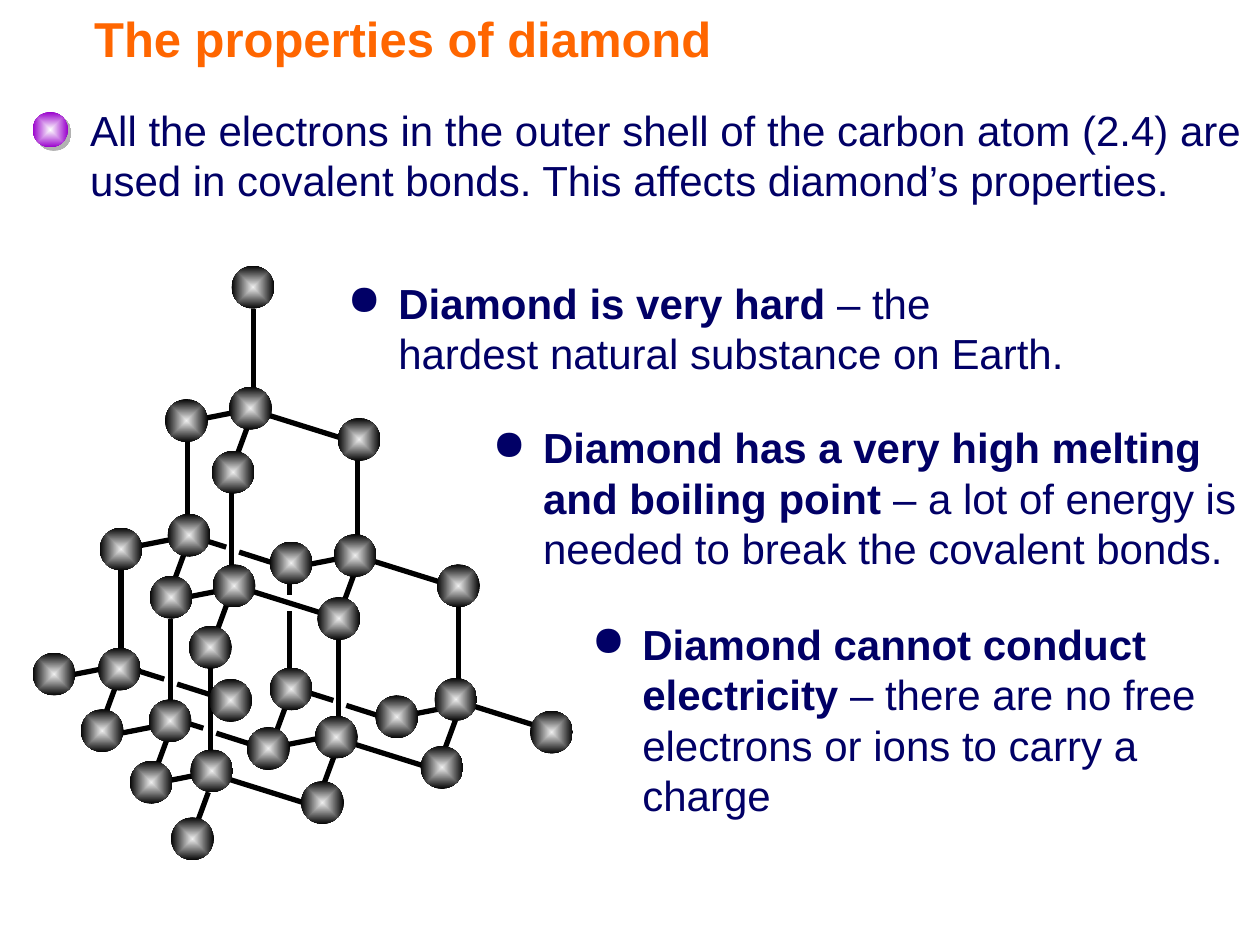
from dataclasses import dataclass

from lxml import etree
from pptx import Presentation
from pptx.dml.color import RGBColor
from pptx.enum.shapes import MSO_CONNECTOR, MSO_SHAPE
from pptx.enum.text import MSO_ANCHOR, MSO_AUTO_SIZE
from pptx.oxml.ns import qn
from pptx.util import Cm, Pt

STRAIGHT = MSO_CONNECTOR.STRAIGHT
OVAL = MSO_SHAPE.OVAL
MIDDLE = MSO_ANCHOR.MIDDLE
TOP = MSO_ANCHOR.TOP
NO_AUTOFIT = MSO_AUTO_SIZE.NONE


@dataclass(frozen=True)
class Theme:
    font: str = "Arial"
    title_size: int = 28
    body_size: int = 24
    title: str = "FF6600"
    body: str = "010066"
    bond: str = "000000"
    bond_width: float = 3
    atom: tuple = ("EFEFEF", "000000")
    marker: tuple = ("FFFFFF", "9900CC")
    shadow: str = "B2B2B2"


ATOM_SIZE = 0.86
ATOM_ROTATION = 358.9
ATOMS = [
    (4.67, 5.36), (2.01, 10.64), (3.38, 10.36), (4.27, 9.09), (3.33, 8.05),
    (5.44, 10.92), (6.81, 8.43), (4.62, 7.8), (6.73, 10.77), (8.81, 11.38),
    (8.48, 15.04), (8.76, 13.67), (10.69, 14.33), (4.29, 11.38), (3.02, 11.61),
    (0.66, 13.16), (1.98, 13.06), (2.62, 15.34), (3.84, 15.11), (5.44, 13.46),
    (4.98, 14.66), (6.07, 15.75), (7.57, 14.02), (3.81, 12.62), (1.63, 14.3),
    (3, 14.1), (4.22, 13.69), (6.35, 14.43), (6.4, 12.04), (3.45, 16.48),
]

BROKEN_STARTS = [(2.74, 13.51), (3.99, 10.85), (6.15, 13.94), (3.53, 14.5)]
BONDS = {
    (0, 1.67): [
        (5.11, 6.22), (3.78, 8.86), (7.21, 9.27), (4.67, 9.93), (2.44, 11.48),
        (3.43, 12.47), (4.24, 13.44), (6.83, 12.85), (9.25, 12.22),
    ],
    (0.61, -0.12): [
        (4.14, 8.43), (2.82, 11), (3.76, 12.04), (1.42, 13.61), (5.79, 15.01),
        (8.31, 14.4), (3.33, 15.75), (2.44, 14.78), (6.22, 11.38),
    ],
    (0.21, -0.57): [
        (4.78, 9.17), (3.51, 11.71), (6.93, 12.14), (2.13, 14.38), (3.15, 15.49),
        (3.99, 16.54), (6.53, 15.8), (8.97, 15.09), (5.56, 14.78), (4.37, 12.73),
    ],
    (1.5, 0.47): [
        (5.38, 8.36), (7.49, 11.3), (5.05, 11.91),
        (4.65, 15.72), (7.11, 14.99), (9.5, 14.22),
    ],
    (0.57, 0.18): BROKEN_STARTS,
    (0.69, 0.22): [(x + 0.83, y + 0.28) for x, y in BROKEN_STARTS],
    (0, 0.36): [(5.84, 11.63)],
    (0, 1.19): [(5.84, 12.32)],
}

PROPERTIES = [
    ((6.76, 5.46, 14.99, 2.29), "Diamond is very hard",
     " – the hardest natural substance on Earth."),
    ((9.68, 8.38, 15.7, 3.3), "Diamond has a very high melting and boiling point",
     " – a lot of energy is needed to break the covalent bonds."),
    ((11.68, 12.34, 13.72, 4.32), "Diamond cannot conduct electricity",
     " – there are no free electrons or ions to carry a charge"),
]


def add_span(para, text, *, font, size, color, bold=False):
    span = para.add_run()
    span.text = text
    span.font.name = font
    span.font.size = Pt(size)
    span.font.bold = bold
    span.font.color.rgb = RGBColor.from_string(color)


def add_node(parent, tag, **attributes):
    node = etree.SubElement(parent, qn(tag))
    for name, value in attributes.items():
        node.set(name, str(value))
    return node


class SlideBuilder:
    def __init__(self, page, theme):
        self.page = page
        self.theme = theme

    def text(self, place, spans, *, size, color, anchor=TOP, indent=0.25, bullet=None):
        box = self.page.shapes.add_textbox(*map(Cm, place))
        frame = box.text_frame
        frame.word_wrap = True
        frame.auto_size = NO_AUTOFIT
        frame.vertical_anchor = anchor
        frame.margin_left = Cm(indent)
        para = frame.paragraphs[0]
        if bullet:
            properties = para._p.get_or_add_pPr()
            properties.set("marL", str(Cm(1.02)))
            properties.set("indent", str(Cm(-1.02)))
            add_node(properties, "a:buChar", char=bullet)
        for text, bold in spans:
            add_span(para, text, font=self.theme.font, size=size, color=color, bold=bold)

    def ball(self, shapes, left, top, size, colors, rotation=0):
        ball = shapes.add_shape(OVAL, Cm(left), Cm(top), Cm(size), Cm(size))
        ball.rotation = rotation
        ball.shadow.inherit = False
        ball.line.fill.background()
        ball.fill.solid()
        properties = ball.element.spPr
        gradient = etree.Element(qn("a:gradFill"), rotWithShape="1")
        stops = add_node(gradient, "a:gsLst")
        for position, color in zip((0, 100000), colors):
            stop = add_node(stops, "a:gs", pos=position)
            add_node(stop, "a:srgbClr", val=color)
        shade = add_node(gradient, "a:path", path="shape")
        add_node(shade, "a:fillToRect", l=50000, t=50000, r=50000, b=50000)
        properties.replace(properties.find(qn("a:solidFill")), gradient)
        return ball

    def marker(self, left, top, size):
        ball = self.ball(self.page.shapes, left, top, size, self.theme.marker)
        effects = ball.element.spPr.find(qn("a:effectLst"))
        shadow = add_node(effects, "a:outerShdw", dist=Pt(2.8), dir=45 * 60000,
                          algn="ctr", rotWithShape=0)
        add_node(shadow, "a:srgbClr", val=self.theme.shadow)

    def bond(self, shapes, start, step):
        (x, y), (across, down) = start, step
        bond = shapes.add_connector(STRAIGHT, Cm(x), Cm(y), Cm(x + across), Cm(y + down))
        bond.line.width = Pt(self.theme.bond_width)
        bond.line.color.rgb = RGBColor.from_string(self.theme.bond)
        add_node(bond.element.spPr, "a:effectLst")

    def lattice(self, bonds, atoms):
        shapes = self.page.shapes.add_group_shape().shapes
        for step, starts in bonds.items():
            for start in starts:
                self.bond(shapes, start, step)
        for left, top in atoms:
            self.ball(shapes, left, top, ATOM_SIZE, self.theme.atom, ATOM_ROTATION)


def main():
    deck = Presentation()
    deck.slide_width, deck.slide_height = Cm(25.4), Cm(19.05)
    theme = Theme()
    builder = SlideBuilder(deck.slides.add_slide(deck.slide_layouts[6]), theme)

    builder.text((0, 0, 18.11, 1.52), [("The properties of diamond", True)],
                 size=theme.title_size, color=theme.title, anchor=MIDDLE, indent=1.9)
    builder.marker(0.66, 2.26, 0.71)
    introduction = ("All the electrons in the outer shell of the carbon atom (2.4) are "
                    "used in covalent bonds. This affects diamond’s properties.")
    builder.text((1.57, 1.98, 23.83, 2.29), [(introduction, False)],
                 size=theme.body_size, color=theme.body)
    builder.lattice(BONDS, ATOMS)
    for place, heading, detail in PROPERTIES:
        builder.text(place, [(heading, True), (detail, False)],
                     size=theme.body_size, color=theme.body, bullet="●")
    deck.save("out.pptx")


if __name__ == "__main__":
    main()
